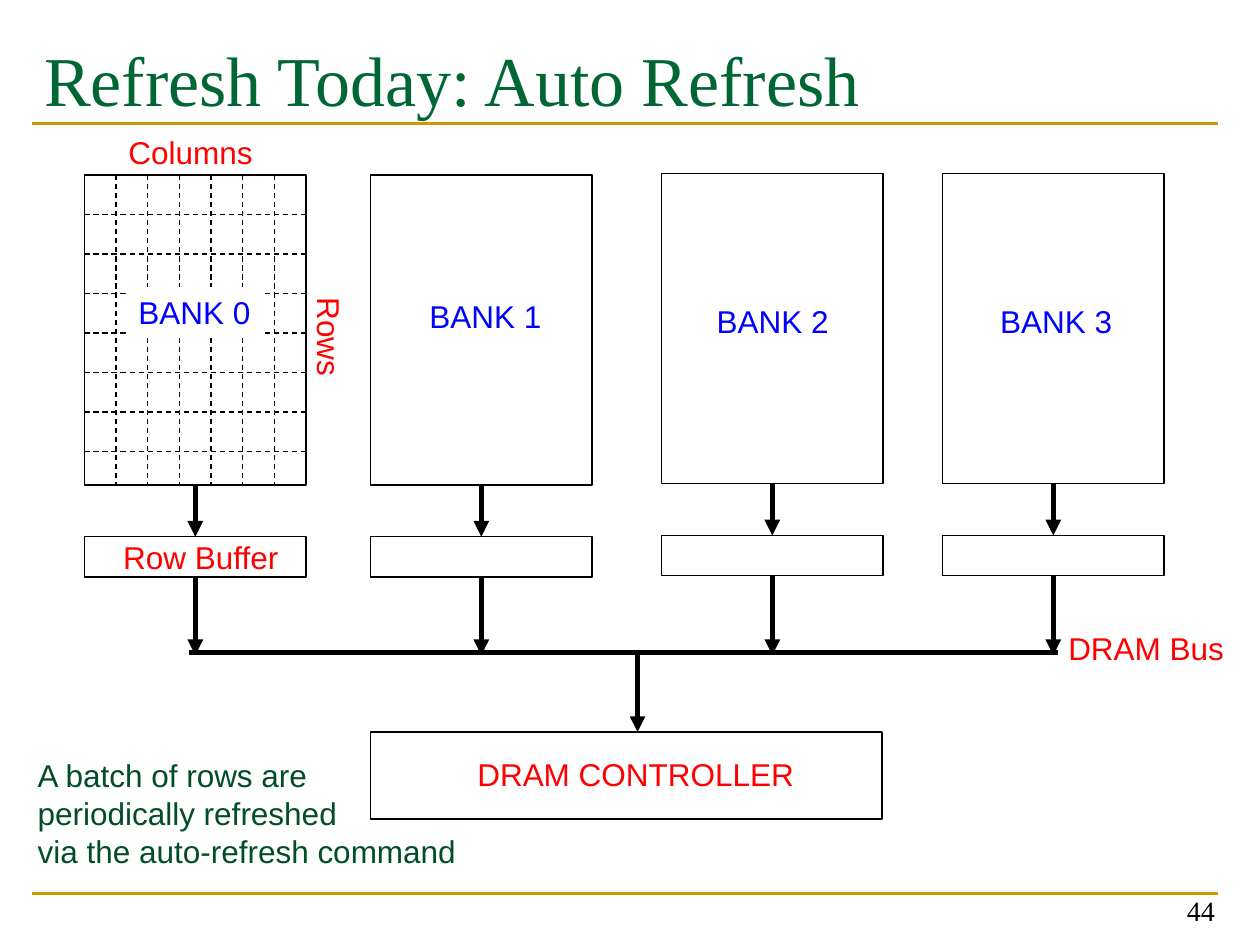
from dataclasses import dataclass

from lxml import etree
from pptx import Presentation
from pptx import util as u
from pptx.dml.color import RGBColor
from pptx.enum import dml, shapes, text
from pptx.oxml.ns import qn

COLUMNS, ROWS = 100, 75
BLACK, RED, BLUE, GOLD = "000000", "FF0000", "0000FF", "CC9900"
BANK_WIDTH, BANK_HEIGHT, BUFFER_HEIGHT = 17.6, 24.6, 3.2
BUFFER_DROP = 28.7
BUS_ROW = 51.8
GRID_COLUMNS, GRID_ROWS = 7, 7.85

presentation = Presentation()
presentation.slide_width, presentation.slide_height = u.Inches(10), u.Inches(7.5)
slide = presentation.slides.add_slide(presentation.slide_layouts[5])


@dataclass
class Area:
    left: float
    top: float
    width: float
    height: float

    def lengths(self) -> list:
        return [cx(self.left), cy(self.top), cx(self.width), cy(self.height)]


@dataclass
class Bank:
    name: str
    left: float
    top: float
    label_left: float
    label_top: float


@dataclass
class Label:
    words: str
    area: Area
    color: str = RED
    rotation: float = 0


BANKS = [
    Bank("BANK 0", 6.7, 13.9, 10, 22.8),
    Bank("BANK 1", 29.4, 13.9, 33.1, 23.1),
    Bank("BANK 2", 52.5, 13.8, 55.9, 23.5),
    Bank("BANK 3", 74.8, 13.8, 78.4, 23.5),
]
LABELS = [
    Label("Columns", Area(9.2, 10.1, 11.9, 4)),
    Label("Rows", Area(22, 24.8, 8.3, 4), rotation=90),
    Label("Row Buffer", Area(8.8, 42.2, 14.4, 4)),
    Label("DRAM CONTROLLER", Area(36.9, 59.4, 27.4, 4)),
    Label("DRAM Bus", Area(83.8, 49.4, 14.5, 4)),
]


def cx(columns: float) -> int:
    return round(presentation.slide_width * columns / COLUMNS)


def cy(rows: float) -> int:
    return round(presentation.slide_height * rows / ROWS)


def rgb(color: str) -> RGBColor:
    return RGBColor.from_string(color)


def apply(target, formats: dict) -> None:
    for name, value in formats.items():
        setattr(target, name, value)


def write(shape, lines: list, color: str, size: float = 18, font: str = "Arial",
          alignment=text.PP_ALIGN.LEFT, **frame_formats) -> None:
    frame = shape.text_frame
    apply(frame, frame_formats)
    for index, line in enumerate(lines):
        paragraph = frame.add_paragraph() if index else frame.paragraphs[0]
        paragraph.alignment = alignment
        run = paragraph.add_run()
        run.text = line
        apply(run.font, {"name": font, "size": u.Pt(size), "bold": False})
        run.font.color.rgb = rgb(color)


def add_line(start: tuple, end: tuple, color: str = BLACK, width: float = 3,
             dashed: bool = False, arrow: bool = False, above=None, below=None):
    connector = slide.shapes.add_connector(
        shapes.MSO_CONNECTOR.STRAIGHT, cx(start[0]), cy(start[1]), cx(end[0]), cy(end[1]))
    connector.line.color.rgb = rgb(color)
    connector.line.width = u.Pt(width)
    if dashed:
        connector.line.dash_style = dml.MSO_LINE.DASH
    if arrow:
        etree.SubElement(connector.line._get_or_add_ln(), qn("a:tailEnd"), type="triangle")
    etree.SubElement(connector._element.spPr, qn("a:effectLst"))
    if above is not None:
        connector.begin_connect(above, 2)
    if below is not None:
        connector.end_connect(below, 0)


def add_box(area: Area):
    box = slide.shapes.add_shape(shapes.MSO_SHAPE.RECTANGLE, *area.lengths())
    box.shadow.inherit = False
    box.fill.background()
    box.line.color.rgb = rgb(BLACK)
    box.line.width = u.Pt(0.75)
    return box


def add_label(label: Label) -> None:
    box = slide.shapes.add_textbox(*label.area.lengths())
    box.rotation = label.rotation
    write(box, [label.words], label.color, word_wrap=False)


def add_bank_label(bank: Bank) -> None:
    box = add_box(Area(bank.label_left, bank.label_top, 11, 4))
    box.fill.solid()
    box.fill.fore_color.rgb = rgb("FFFFFF")
    box.line.fill.background()
    write(box, [bank.name], BLUE, word_wrap=False, vertical_anchor=text.MSO_ANCHOR.TOP)


def add_bank(bank: Bank) -> None:
    middle = bank.left + BANK_WIDTH / 2
    buffer_top = bank.top + BUFFER_DROP
    cells = add_box(Area(bank.left, bank.top, BANK_WIDTH, BANK_HEIGHT))
    row_buffer = add_box(Area(bank.left, buffer_top, BANK_WIDTH, BUFFER_HEIGHT))
    add_line((middle, bank.top + BANK_HEIGHT), (middle, buffer_top),
             arrow=True, above=cells, below=row_buffer)
    add_line((middle, buffer_top + BUFFER_HEIGHT), (middle, BUS_ROW + 0.2),
             arrow=True, above=row_buffer)


def add_cell_grid(bank: Bank) -> None:
    right, bottom = bank.left + BANK_WIDTH, bank.top + BANK_HEIGHT
    for index in range(1, 8):
        row = bank.top + index * BANK_HEIGHT / GRID_ROWS
        add_line((bank.left, row), (right, row), width=0.75, dashed=True)
    for index in range(1, GRID_COLUMNS):
        column = bank.left + index * BANK_WIDTH / GRID_COLUMNS
        add_line((column, bank.top), (column, bottom), width=0.75, dashed=True)


def main() -> None:
    for row in (70.9, 9.8):
        add_line((2.5, row), (96.7, row), color=GOLD, width=1.5)

    title = slide.shapes.title
    apply(title, dict(zip(("left", "top", "width", "height"),
                          Area(2.5, 1.7, 94.2, 11.7).lengths())))
    write(title, ["Refresh Today: Auto Refresh"], "006633", 40, "Times New Roman",
          vertical_anchor=text.MSO_ANCHOR.TOP, margin_top=u.Inches(0.12),
          auto_size=text.MSO_AUTO_SIZE.NONE)

    number = slide.shapes.add_textbox(*Area(74.1, 69.1, 23.3, 5).lengths())
    write(number, ["44"], BLACK, 16, "Times New Roman", text.PP_ALIGN.RIGHT,
          word_wrap=True, vertical_anchor=text.MSO_ANCHOR.BOTTOM)

    for bank in BANKS:
        add_bank(bank)
    add_cell_grid(BANKS[0])

    add_line((15, BUS_ROW), (84, BUS_ROW))
    add_line((50.6, BUS_ROW), (50.6, 58.1), arrow=True)
    add_box(Area(29.4, 58.1, 40.6, 6.9))

    for label in LABELS:
        add_label(label)
    for bank in BANKS:
        add_bank_label(bank)

    remark = slide.shapes.add_textbox(*Area(2, 59.5, 37, 10.1).lengths())
    write(remark, ["A batch of rows are", "periodically refreshed",
                   "via the auto-refresh command"], "004D26", word_wrap=True)

    presentation.save("out.pptx")


if __name__ == "__main__":
    main()
